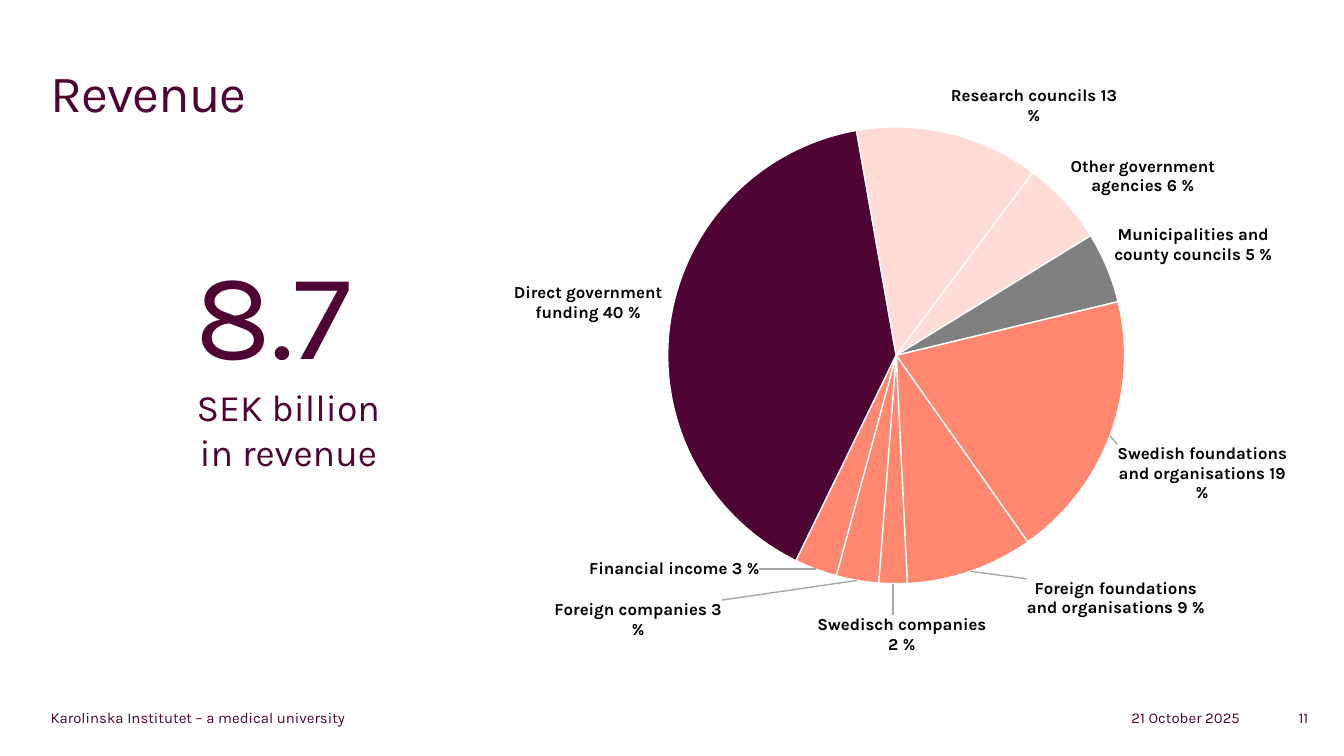
from copy import deepcopy
from dataclasses import dataclass

from lxml import etree
from pptx import Presentation
from pptx.chart.data import CategoryChartData as ChartData
from pptx.dml.color import RGBColor as Color
from pptx.enum.chart import XL_CHART_TYPE as Kind, XL_LABEL_POSITION as Spot
from pptx.enum.text import MSO_ANCHOR as Anchor, PP_ALIGN as Align
from pptx.oxml import parse_xml
from pptx.oxml.ns import nsdecls, qn
from pptx.util import Pt


@dataclass(frozen=True)
class Theme:
    face: str = "Karla"
    plum: str = "4F0433"
    pink: str = "FFDDD6"
    gray: str = "808080"
    coral: str = "FF876F"
    white: str = "FFFFFF"
    black: str = "000000"
    lead: str = "A6A6A6"
    head: float = 28
    big: float = 66
    mid: float = 20
    label: float = 9
    foot: float = 8


THEME = Theme()

# Name, share in percent, colour, label shift (part of chart width, height)
PARTS = [
    ("Direct government funding", 40, THEME.plum, None),
    ("Research councils", 13, THEME.pink, None),
    ("Other government agencies", 6, THEME.pink, None),
    ("Municipalities and county councils", 5, THEME.gray, None),
    ("Swedish foundations and organisations", 19, THEME.coral, (0, 0.01)),
    ("Foreign foundations and organisations", 9, THEME.coral, (0.06, 0)),
    ("Swedisch companies", 2, THEME.coral, (0.01, 0.04)),
    ("Foreign companies", 3, THEME.coral, (-0.15, 0.02)),
    ("Financial income", 3, THEME.coral, (-0.06, -0.03)),
]


def style(font, size, hue, bold=False):
    font.name, font.size, font.bold = THEME.face, Pt(size), bold
    font.color.rgb = Color.from_string(hue)


def write(para, text, size=THEME.foot, hue=THEME.plum, align=Align.LEFT, space=None):
    """Add one run of text to a paragraph; space is in hundredths of a point."""
    para.alignment = align
    run = para.add_run()
    run.text = text
    style(run.font, size, hue)
    if space is not None:
        run._r.get_or_add_rPr().set("spc", str(space))


def layout(x, y, w=None, h=None):
    """Manual chart layout, in parts of the chart's size."""
    rows = []
    if w:
        rows.append('<c:layoutTarget val="inner"/><c:xMode val="edge"/><c:yMode val="edge"/>')
    rows += [f'<c:{key} val="{val}"/>' for key, val in zip("xywh", (x, y, w, h)) if val is not None]
    return parse_xml(f'<c:layout {nsdecls("c")}><c:manualLayout>{"".join(rows)}'
                     '</c:manualLayout></c:layout>')


class Page:
    def __init__(self, deck, theme):
        self.theme = theme
        self.slide = deck.slides.add_slide(deck.slide_layouts[5])

    def frame(self, shape, top=0, anchor=Anchor.MIDDLE):
        box = shape.text_frame
        box.word_wrap, box.vertical_anchor = True, anchor
        box.margin_left = box.margin_right = Pt(7.2)
        box.margin_top = box.margin_bottom = Pt(top)
        return box.paragraphs[0]

    def title(self, text, x, y, w, h):
        shape = self.slide.shapes.title
        shape.left, shape.top, shape.width, shape.height = map(Pt, (x, y, w, h))
        write(self.frame(shape, 6, Anchor.TOP), text, self.theme.head, space=-50)

    def text(self, text, x, y, w, h, **form):
        shape = self.slide.shapes.add_textbox(*map(Pt, (x, y, w, h)))
        write(self.frame(shape), text, **form)

    def figure(self, value, lines, x, y, w, h):
        shape = self.slide.shapes.add_textbox(*map(Pt, (x, y, w, h)))
        para = self.frame(shape, 3.6, Anchor.TOP)
        write(para, value + " ", self.theme.big, align=Align.CENTER)
        para.add_line_break()
        write(para, lines[0], self.theme.mid, align=Align.CENTER)
        for line in lines[1:]:
            write(shape.text_frame.add_paragraph(), line, self.theme.mid, align=Align.CENTER)

    def pie(self, parts, start, x, y, w, h):
        data = ChartData()
        data.categories = [f"{name} {share} %" for name, share, *_ in parts]
        data.add_series("Series 1", [part[1] for part in parts])
        chart = self.slide.shapes.add_chart(Kind.PIE, *map(Pt, (x, y, w, h)), data).chart
        chart.has_legend = chart.has_title = False
        style(chart.font, 10, self.theme.black)
        plot = chart.plots[0]
        plot.vary_by_categories = True

        # Place and turn the pie
        area = chart._chartSpace.chart.plotArea
        old = area.find(qn("c:layout"))
        if old is not None:
            area.remove(old)
        area.insert(0, layout(0.24, 0.1, 0.51, 0.77))
        pie = plot._element
        turn = pie.find(qn("c:firstSliceAng"))
        if turn is None:
            turn = etree.SubElement(pie, qn("c:firstSliceAng"))
        turn.set("val", str(start))

        # Slices
        row = plot.series[0]
        for i, part in enumerate(parts):
            form = row.points[i].format
            form.fill.solid()
            form.fill.fore_color.rgb = Color.from_string(part[2])
            form.line.width = Pt(0.75)
            form.line.color.rgb = Color.from_string(self.theme.white)
        self.labels(row, [part[3] for part in parts])

    def labels(self, row, shifts):
        tags = row.data_labels
        tags.show_value, tags.show_category_name = False, True
        tags.position = Spot.OUTSIDE_END
        style(tags.font, self.theme.label, self.theme.black, bold=True)
        root = tags._element

        # Moved labels
        flags = "".join(f'<c:show{key} val="{int(key == "CatName")}"/>' for key in
                        ("LegendKey", "Val", "CatName", "SerName", "Percent", "BubbleSize"))
        moved = [(i, shift) for i, shift in enumerate(shifts) if shift]
        for spot, (i, shift) in enumerate(moved):
            tag = parse_xml(f'<c:dLbl {nsdecls("c")}><c:idx val="{i}"/>'
                            f'<c:dLblPos val="outEnd"/>{flags}</c:dLbl>')
            tag.insert(1, layout(*shift))
            tag.insert(2, deepcopy(root.find(qn("c:txPr"))))
            root.insert(spot, tag)

        # Leader lines
        show = root.find(qn("c:showLeaderLines"))
        if show is None:
            show = etree.SubElement(root, qn("c:showLeaderLines"))
        show.set("val", "1")
        show.addnext(parse_xml(
            f'<c:leaderLines {nsdecls("c", "a")}><c:spPr><a:ln w="9525"><a:solidFill>'
            f'<a:srgbClr val="{self.theme.lead}"/></a:solidFill></a:ln></c:spPr></c:leaderLines>'))


def main():
    deck = Presentation()
    deck.slide_width, deck.slide_height = Pt(720), Pt(405)
    page = Page(deck, THEME)

    # Title and key figure
    page.title("Revenue", 20, 26.5, 680, 68)
    page.figure("8.7", ["SEK billion", "in revenue"], 22.5, 123, 264, 135.5)

    # Revenue by source
    page.pie(PARTS, 206, 242.5, 35.5, 480, 319.5)

    # Footer
    foot, high = 377.5, 13.5
    page.text("Karolinska Institutet – a medical university", 20, foot, 204, high)
    page.text("21 October 2025", 521.5, foot, 150, high, align=Align.RIGHT)
    page.text("11", 654, foot, 54, high, align=Align.RIGHT)

    deck.save("out.pptx")


if __name__ == "__main__":
    main()
